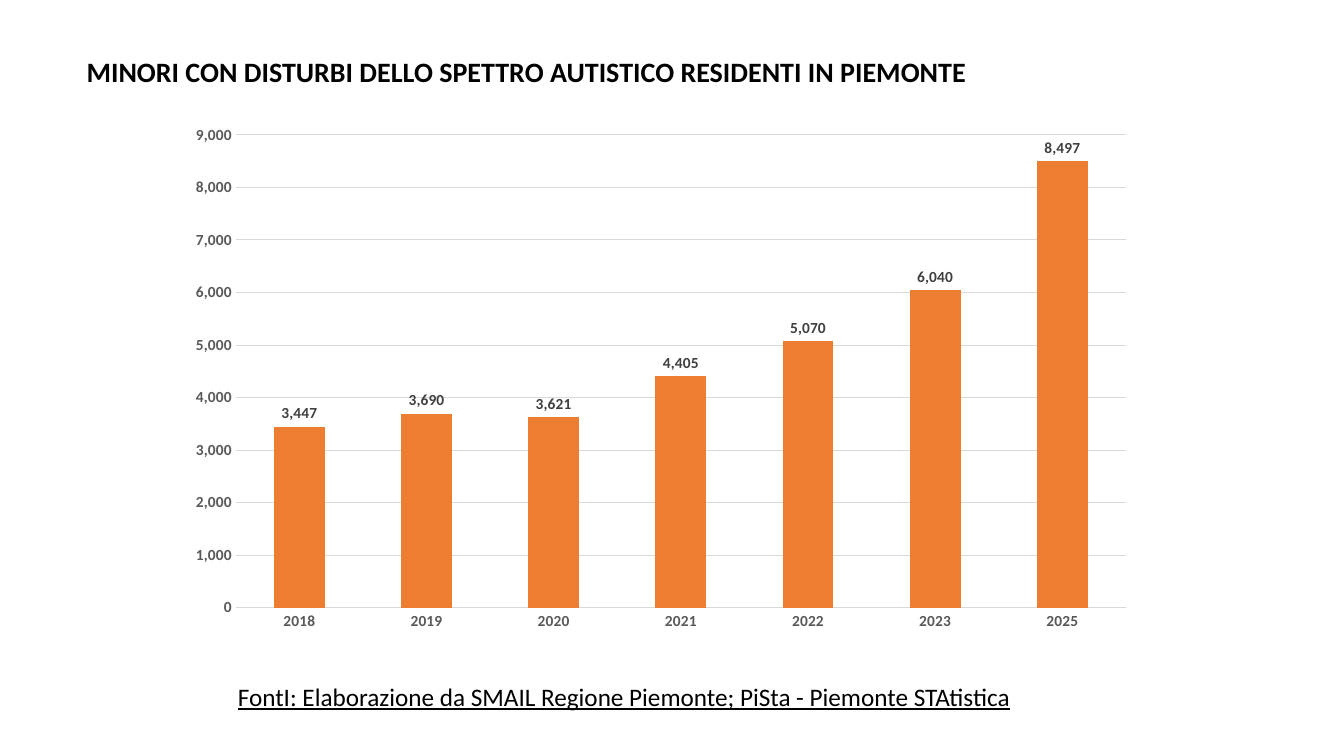
from pptx import Presentation
from pptx.chart.data import CategoryChartData
from pptx.dml.color import RGBColor
from pptx.enum.chart import XL_CHART_TYPE as ChartType, XL_LABEL_POSITION as LabelPos
from pptx.enum.chart import XL_TICK_MARK as TickMark
from pptx.enum.text import MSO_AUTO_SIZE as AutoSize
from pptx.util import Inches, Pt

BLACK = RGBColor(0x00, 0x00, 0x00)
AXIS_GREY = RGBColor(0x59, 0x59, 0x59)
LABEL_GREY = RGBColor(0x40, 0x40, 0x40)
GRID_GREY = RGBColor(0xD9, 0xD9, 0xD9)
ORANGE = RGBColor(0xED, 0x7D, 0x31)
FONT = "Calibri"

MINORS_BY_YEAR = {
    "2018": 3447, "2019": 3690, "2020": 3621, "2021": 4405,
    "2022": 5070, "2023": 6040, "2025": 8497,
}

deck = Presentation()
deck.slide_width, deck.slide_height = Inches(13.33), Inches(7.5)
slide = deck.slides.add_slide(deck.slide_layouts[6])


def style_font(font, size, color, bold=False):
    font.name, font.size, font.bold = FONT, Pt(size), bold
    font.color.rgb = color


# Column chart
minors = CategoryChartData(number_format="#,##0")
minors.categories = list(MINORS_BY_YEAR)
minors.add_series("Minori", list(MINORS_BY_YEAR.values()))
chart = slide.shapes.add_chart(
    ChartType.COLUMN_CLUSTERED,
    Inches(1.75), Inches(1.14), Inches(9.61), Inches(5.22), minors).chart
chart.has_legend = False
chart.has_title = False
style_font(chart.font, 11, BLACK, bold=True)

# Axes and gridlines
years, counts = chart.category_axis, chart.value_axis
for axis in (years, counts):
    axis.major_tick_mark = axis.minor_tick_mark = TickMark.NONE
    axis.format.line.fill.background()
    style_font(axis.tick_labels.font, 11, AXIS_GREY, bold=True)
counts.minimum_scale, counts.maximum_scale, counts.major_unit = 0, 9000, 1000
counts.tick_labels.number_format = "#,##0"
counts.tick_labels.number_format_is_linked = False
counts.major_gridlines.format.line.color.rgb = GRID_GREY
counts.major_gridlines.format.line.width = Pt(0.75)

# Columns and their values
columns = chart.plots[0]
columns.gap_width = 150
columns.vary_by_categories = False
columns.series[0].format.fill.solid()
columns.series[0].format.fill.fore_color.rgb = ORANGE
columns.has_data_labels = True
values = columns.data_labels
values.show_value = True
values.position = LabelPos.OUTSIDE_END
values.number_format, values.number_format_is_linked = "#,##0", False
style_font(values.font, 11, LABEL_GREY, bold=True)

# Source line and heading: text, left, top, width, height, size, bold, underline
CAPTIONS = [
    ("FontI: Elaborazione da SMAIL Regione Piemonte; PiSta - Piemonte STAtistica",
     2.26, 6.71, 9.89, 0.4, 18, False, True),
    ("MINORI CON DISTURBI DELLO SPETTRO AUTISTICO RESIDENTI IN PIEMONTE",
     0.76, 0.49, 10.42, 0.44, 20, True, False),
]
for text, left, top, width, height, size, bold, underline in CAPTIONS:
    frame = slide.shapes.add_textbox(
        Inches(left), Inches(top), Inches(width), Inches(height)).text_frame
    frame.word_wrap = True
    frame.auto_size = AutoSize.SHAPE_TO_FIT_TEXT
    run = frame.paragraphs[0].add_run()
    run.text = text
    style_font(run.font, size, BLACK, bold)
    run.font.underline = underline

deck.save("out.pptx")
